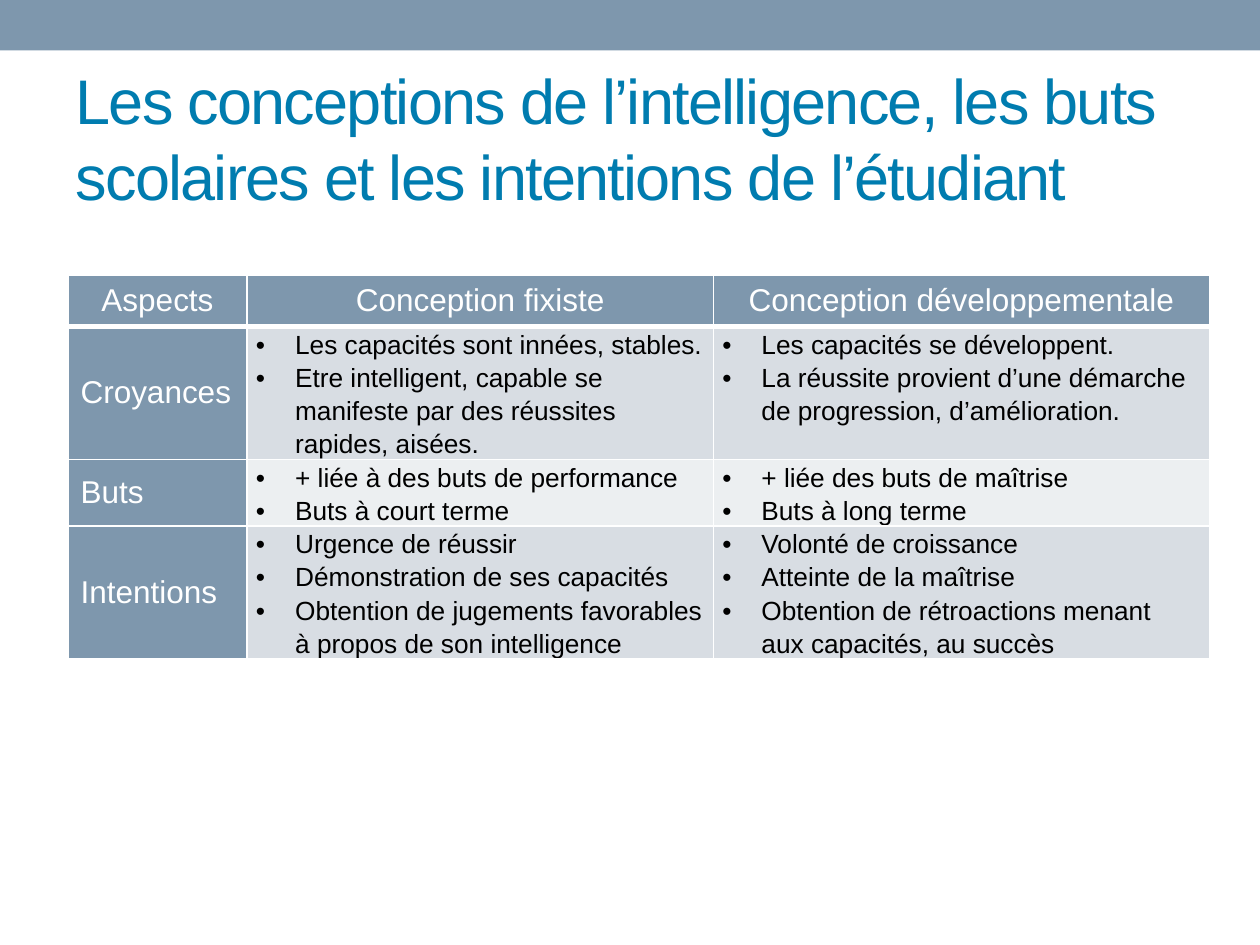
"""Build a slide comparing fixed and developmental conceptions of intelligence."""
from dataclasses import dataclass

from lxml import etree
from pptx import Presentation
from pptx import util as u
from pptx.dml import color
from pptx.enum import shapes, text
from pptx.oxml import ns


@dataclass(frozen=True)
class Theme:
    font: str = "Arial"
    title: str = "007CAF"
    accent: str = "7E97AD"
    band_dark: str = "D8DDE3"
    band_light: str = "ECEFF1"
    white: str = "FFFFFF"
    black: str = "000000"
    title_size: int = 36
    head_size: int = 18
    body_size: int = 15


THEME = Theme()
TITLE = ("Les conceptions de l’intelligence, les buts scolaires "
         "et les intentions de l’étudiant")
HEADERS = ["Aspects", "Conception fixiste", "Conception développementale"]
ROWS = [
    ("Croyances",
     ["Les capacités sont innées, stables.",
      "Etre intelligent, capable se manifeste par des réussites rapides, aisées."],
     ["Les capacités se développent.",
      "La réussite provient d’une démarche de progression, d’amélioration."]),
    ("Buts",
     ["+ liée à des buts de performance", "Buts à court terme"],
     ["+ liée des buts de maîtrise", "Buts à long terme"]),
    ("Intentions",
     ["Urgence de réussir", "Démonstration de ses capacités",
      "Obtention de jugements favorables à propos de son intelligence"],
     ["Volonté de croissance", "Atteinte de la maîtrise",
      "Obtention de rétroactions menant aux capacités, au succès"]),
]
COL_WIDTHS = [u.Cm(3.61), u.Cm(9.4), u.Cm(10)]
ROW_HEIGHT = u.Cm(1.04)


def rgb(value):
    """Turn a hex string into a colour."""
    return color.RGBColor.from_string(value)


def paint(target, value):
    """Give a shape or cell a solid fill."""
    target.fill.solid()
    target.fill.fore_color.rgb = rgb(value)


def add_run(p, content, size, value):
    """Append a formatted run to a paragraph."""
    r = p.add_run()
    r.text = content
    r.font.name = THEME.font
    r.font.size = u.Pt(size)
    r.font.bold = False
    r.font.color.rgb = rgb(value)
    return r


def set_borders(cell, top=1, bottom=1):
    """Draw white borders, with widths in points, before the cell fill."""
    tc_pr = cell._tc.get_or_add_tcPr()
    widths = {"lnL": 1, "lnR": 1, "lnT": top, "lnB": bottom}
    for i, (tag, width) in enumerate(widths.items()):
        ln = etree.Element(ns.qn(f"a:{tag}"), w=str(u.Pt(width)))
        fill = etree.SubElement(ln, ns.qn("a:solidFill"))
        etree.SubElement(fill, ns.qn("a:srgbClr"), val=THEME.white)
        tc_pr.insert(i, ln)


def set_bullet(p):
    """Give a paragraph a hanging bullet."""
    p_pr = p._p.get_or_add_pPr()
    p_pr.set("marL", str(u.Cm(0.79)))
    p_pr.set("indent", str(-u.Cm(0.79)))
    etree.SubElement(p_pr, ns.qn("a:buFont"), typeface=THEME.font)
    etree.SubElement(p_pr, ns.qn("a:buChar"), char="•")


def fill_label(cell, content, align):
    """Write a white label on an accent cell."""
    paint(cell, THEME.accent)
    cell.vertical_anchor = text.MSO_ANCHOR.MIDDLE
    p = cell.text_frame.paragraphs[0]
    p.alignment = align
    add_run(p, content, THEME.head_size, THEME.white)


def fill_list(cell, items, background):
    """Write a bulleted list in a body cell."""
    paint(cell, background)
    cell.margin_left = cell.margin_right = u.Cm(0.18)
    cell.margin_top = cell.margin_bottom = 0
    tf = cell.text_frame
    for i, item in enumerate(items):
        p = tf.add_paragraph() if i else tf.paragraphs[0]
        p.line_spacing = 1.14
        set_bullet(p)
        add_run(p, item, THEME.body_size, THEME.black)


def add_band(s, width):
    """Add the coloured band along the top edge."""
    sp = s.shapes.add_shape(shapes.MSO_SHAPE.RECTANGLE, 0, 0, width, u.Cm(1.02))
    sp.shadow.inherit = False
    paint(sp, THEME.accent)
    sp.line.fill.background()


def set_title(s):
    """Place and format the title placeholder."""
    sp = s.shapes.title
    sp.left, sp.top, sp.width, sp.height = (
        u.Cm(1.27), u.Cm(2.13), u.Cm(22.86), u.Cm(2.74))
    tf = sp.text_frame
    tf.word_wrap = True
    tf.auto_size = text.MSO_AUTO_SIZE.NONE
    tf.vertical_anchor = text.MSO_ANCHOR.MIDDLE
    tf.margin_bottom = u.Cm(1.6)
    p = tf.paragraphs[0]
    p.alignment = text.PP_ALIGN.LEFT
    r = add_run(p, TITLE, THEME.title_size, THEME.title)
    r.font._element.set("spc", "-100")


def add_comparison(s):
    """Add the table comparing the two conceptions."""
    frame = s.shapes.add_table(
        len(ROWS) + 1, len(HEADERS), u.Cm(1.37), u.Cm(5.54),
        sum(COL_WIDTHS), ROW_HEIGHT * (len(ROWS) + 1))
    table = frame.table
    table.first_row = table.horz_banding = False
    for column, width in zip(table.columns, COL_WIDTHS):
        column.width = width
    for j, header in enumerate(HEADERS):
        cell = table.cell(0, j)
        fill_label(cell, header, text.PP_ALIGN.CENTER)
        set_borders(cell, bottom=3)
    for i, (aspect, *lists) in enumerate(ROWS, start=1):
        fill_label(table.cell(i, 0), aspect, text.PP_ALIGN.LEFT)
        background = THEME.band_dark if i % 2 else THEME.band_light
        for j, items in enumerate(lists, start=1):
            fill_list(table.cell(i, j), items, background)
        for cell in table.rows[i].cells:
            set_borders(cell, top=3 if i == 1 else 1)


def main():
    """Build and save the presentation."""
    prs = Presentation()
    prs.slide_width, prs.slide_height = u.Cm(25.4), u.Cm(19.05)
    s = prs.slides.add_slide(prs.slide_layouts[5])
    add_band(s, prs.slide_width)
    set_title(s)
    add_comparison(s)
    prs.save("out.pptx")


if __name__ == "__main__":
    main()
